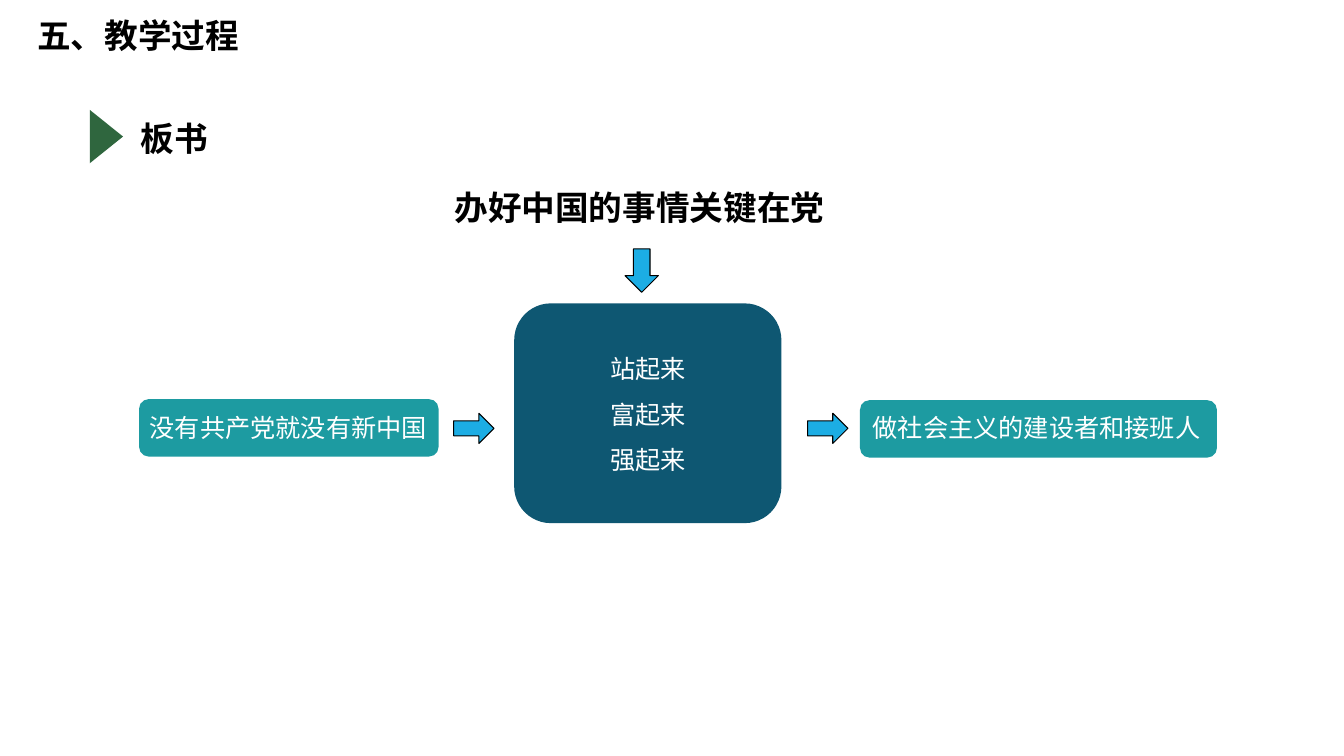
from lxml import etree
from pptx import Presentation
from pptx import util as u
from pptx.dml.color import RGBColor
from pptx.enum import shapes, text
from pptx.oxml.ns import qn

HUES = {"ink": "000000", "white": "FFFFFF", "teal": "1D9BA1",
        "navy": "0E5772", "sky": "1CADE4", "green": "2F663E"}
KIND = shapes.MSO_SHAPE


class Board:
    """Draws styled elements on one slide."""

    font = "Noto Sans CJK SC"

    def __init__(self, deck):
        self.slide = deck.slides.add_slide(deck.slide_layouts[5])

    def hue(self, name):
        return RGBColor.from_string(HUES[name])

    def place(self, item, box):
        item.left, item.top, item.width, item.height = map(u.Inches, box)

    def fill_text(self, item, lines, size, hue, bold=False, mid=False, gap=1.0):
        frame = item.text_frame
        frame.word_wrap = mid
        frame.auto_size = text.MSO_AUTO_SIZE.SHAPE_TO_FIT_TEXT
        frame.vertical_anchor = text.MSO_ANCHOR.TOP
        for i, line in enumerate(lines):
            para = frame.add_paragraph() if i else frame.paragraphs[0]
            para.alignment = text.PP_ALIGN.CENTER if mid else text.PP_ALIGN.LEFT
            para.line_spacing = gap
            run = para.add_run()
            run.text = line
            font = run.font
            font.size, font.bold, font.name = u.Pt(size), bold, self.font
            font.color.rgb = self.hue(hue)
            east = etree.SubElement(run._r.get_or_add_rPr(), qn("a:ea"))
            east.set("typeface", self.font)

    def title(self, line, box):
        item = self.slide.shapes.title
        self.place(item, box)
        self.fill_text(item, [line], 24, "ink", bold=True)

    def head(self, line, box):
        item = self.slide.shapes.add_textbox(*map(u.Inches, box))
        self.fill_text(item, [line], 24, "ink", bold=True)

    def label(self, lines, box, gap=1.0):
        item = self.slide.shapes.add_textbox(*map(u.Inches, box))
        self.fill_text(item, lines, 18, "white", mid=True, gap=gap)

    def shape(self, kind, box, fill, edge=None, turn=0):
        item = self.slide.shapes.add_shape(kind, *map(u.Inches, box))
        item.shadow.inherit = False
        item.rotation = turn
        item.fill.solid()
        item.fill.fore_color.rgb = self.hue(fill)
        if edge:
            item.line.color.rgb = self.hue(edge)
            item.line.width = u.Pt(0.75)
        else:
            item.line.fill.background()

    def arrow(self, kind, box):
        self.shape(kind, box, "sky", "ink")


def main():
    deck = Presentation()
    deck.slide_width, deck.slide_height = u.Inches(13.33), u.Inches(7.5)
    board = Board(deck)
    board.title("五、教学过程", (0.27, 0.1, 2.22, 0.5))

    board.shape(KIND.ROUNDED_RECTANGLE, (1.38, 3.96, 2.97, 0.57), "teal")
    board.label(["没有共产党就没有新中国"], (1.38, 4.04, 2.96, 0.4))
    board.shape(KIND.ROUNDED_RECTANGLE, (5.1, 3.01, 2.65, 2.18), "navy")
    board.label(["站起来", "富起来", "强起来"], (3.36, 3.31, 6.14, 1.46), gap=1.5)
    board.shape(KIND.ROUNDED_RECTANGLE, (8.53, 3.97, 3.54, 0.57), "teal")
    board.label(["做社会主义的建设者和接班人"], (8.49, 4.04, 3.58, 0.4))
    for left in (4.5, 8.01):
        board.arrow(KIND.RIGHT_ARROW, (left, 4.1, 0.4, 0.3))

    board.head("办好中国的事情关键在党", (4.41, 1.81, 3.9, 0.5))
    board.shape(KIND.ISOSCELES_TRIANGLE, (0.79, 1.19, 0.53, 0.33), "green", turn=90)
    board.head("板书", (1.3, 1.12, 0.88, 0.51))
    board.arrow(KIND.DOWN_ARROW, (6.2, 2.47, 0.33, 0.43))
    deck.save("out.pptx")


if __name__ == "__main__":
    main()
